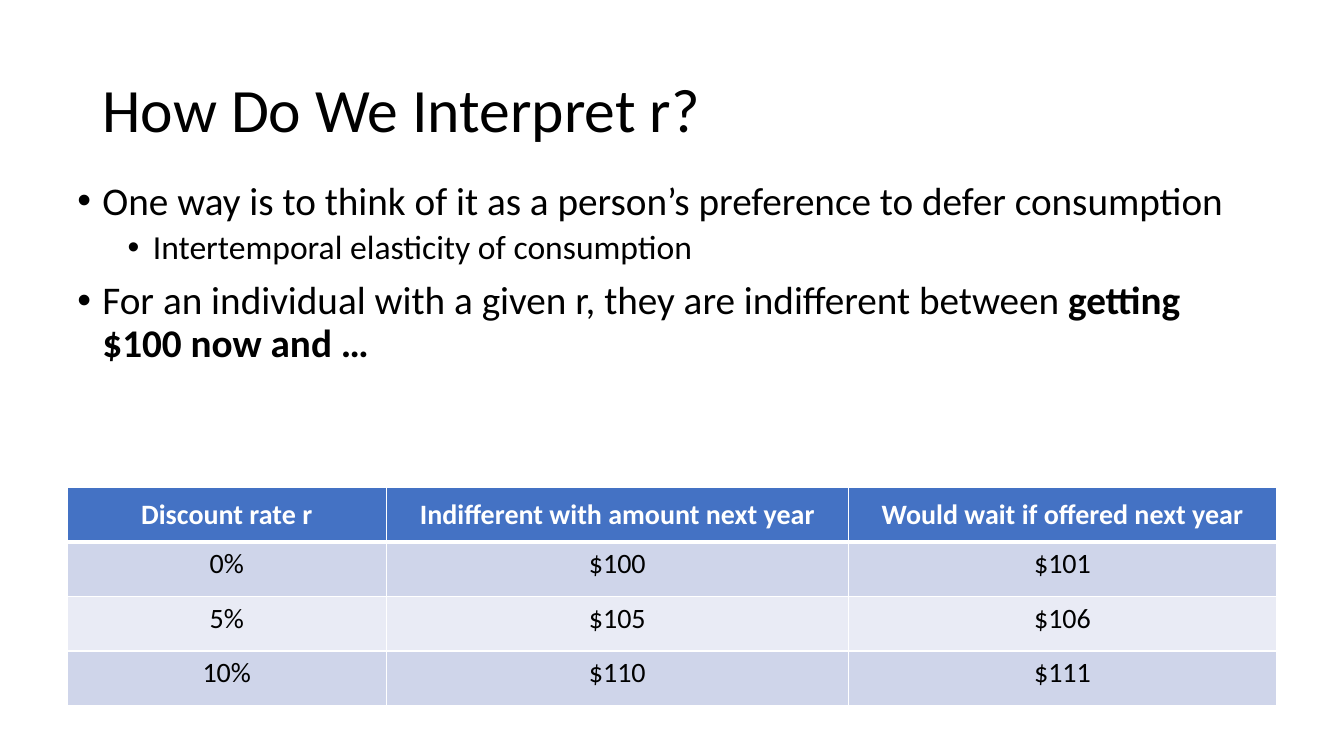
from lxml.etree import SubElement
from pptx import Presentation
from pptx.dml.color import RGBColor
from pptx.enum.text import MSO_ANCHOR as Anchor, MSO_AUTO_SIZE as AutoSize, PP_ALIGN as Align
from pptx.oxml.ns import qn
from pptx.util import Pt

PX = 9525  # EMU per px, 96 px to the inch
FONT = "Calibri"
BLACK = RGBColor(0x00, 0x00, 0x00)
WHITE = RGBColor(0xFF, 0xFF, 0xFF)
HEADER_BLUE = RGBColor(0x44, 0x72, 0xC4)
BANDS = (RGBColor(0xCF, 0xD5, 0xEA), RGBColor(0xE9, 0xEB, 0xF5))

BULLETS = [
    (0, [("One way is to think of it as a person’s preference to defer consumption", False)]),
    (1, [("Intertemporal elasticity of consumption", False)]),
    (0, [("For an individual with a given r, they are indifferent between ", False),
         ("getting $100 now and …", True)]),
]
LEVELS = [dict(size=28, before=10, indent=24), dict(size=24, before=5, indent=72)]
HANGING = 24

COLUMNS = (304, 440, 408)
RATES = [
    ("Discount rate r", "Indifferent with amount next year", "Would wait if offered next year"),
    ("0%", "$100", "$101"),
    ("5%", "$105", "$106"),
    ("10%", "$110", "$111"),
]


def px(*lengths):
    return [n * PX for n in lengths]


def add_run(p, text, size, color=BLACK, bold=False):
    r = p.add_run()
    r.text = text
    r.font.name = FONT
    r.font.size = Pt(size)
    r.font.bold = bold
    r.font.color.rgb = color


def place(sp, box, anchor):
    """Move a placeholder into the box and return its text frame."""
    sp.left, sp.top, sp.width, sp.height = px(*box)
    tf = sp.text_frame
    tf.word_wrap = True
    tf.auto_size = AutoSize.NONE
    tf.vertical_anchor = anchor
    return tf


def fill_title(sp, box, text):
    p = place(sp, box, Anchor.MIDDLE).paragraphs[0]
    p.alignment = Align.LEFT
    p.line_spacing = 0.9
    add_run(p, text, 44)


def fill_bullets(sp, box, items):
    tf = place(sp, box, Anchor.TOP)
    for i, (level, runs) in enumerate(items):
        p = tf.add_paragraph() if i else tf.paragraphs[0]
        style = LEVELS[level]
        p.level = level
        p.line_spacing = 0.9
        p.space_before = Pt(style["before"])
        pPr = p._p.get_or_add_pPr()
        pPr.set("marL", str(style["indent"] * PX))
        pPr.set("indent", str(-HANGING * PX))
        SubElement(pPr, qn("a:buFont"), typeface="Arial")
        SubElement(pPr, qn("a:buChar"), char="•")
        for text, bold in runs:
            add_run(p, text, style["size"], bold=bold)


def add_borders(cell, **widths):
    """Draw white cell edges, with widths in points for L, R, T and B."""
    tcPr = cell._tc.get_or_add_tcPr()
    for side, width in widths.items():
        ln = SubElement(tcPr, qn(f"a:ln{side}"), w=str(Pt(width)))
        SubElement(SubElement(ln, qn("a:solidFill")), qn("a:srgbClr"), val=str(WHITE))


def add_rate_table(s, box, rows):
    table = s.shapes.add_table(len(rows), len(COLUMNS), *px(*box)).table
    for column, width in zip(table.columns, px(*COLUMNS)):
        column.width = width
    for i, values in enumerate(rows):
        header = i == 0
        for j, text in enumerate(values):
            cell = table.cell(i, j)
            add_borders(cell, L=1, R=1, T=3 if i == 1 else 1, B=3 if header else 1)
            cell.fill.solid()
            cell.fill.fore_color.rgb = HEADER_BLUE if header else BANDS[(i - 1) % 2]
            cell.vertical_anchor = Anchor.MIDDLE if header else Anchor.TOP
            p = cell.text_frame.paragraphs[0]
            p.alignment = Align.CENTER
            add_run(p, text, 20, WHITE if header else BLACK, header)


def main():
    prs = Presentation()
    prs.slide_width, prs.slide_height = px(1280, 720)
    s = prs.slides.add_slide(prs.slide_layouts[1])
    fill_title(s.shapes.title, (88, 38, 1104, 139), "How Do We Interpret r?")
    fill_bullets(s.placeholders[1], (64, 168, 1152, 279), BULLETS)
    add_rate_table(s, (64, 464, sum(COLUMNS), 208), RATES)
    prs.save("out.pptx")


if __name__ == "__main__":
    main()
